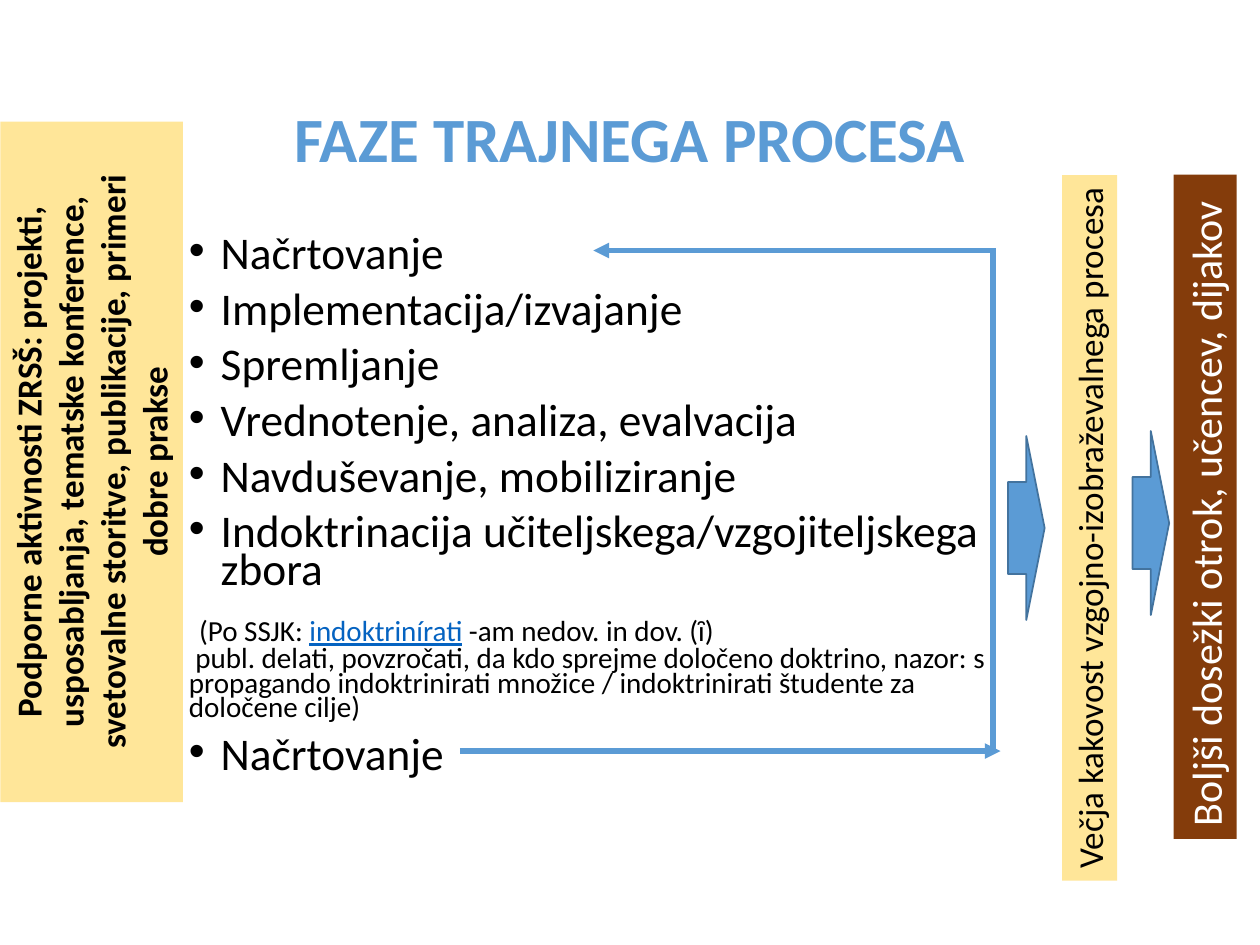
from dataclasses import dataclass

from lxml import etree
from pptx import Presentation
from pptx.dml.color import RGBColor
from pptx.enum.shapes import MSO_CONNECTOR, MSO_SHAPE
from pptx.enum.text import MSO_ANCHOR, MSO_AUTO_SIZE, PP_ALIGN
from pptx.oxml.ns import qn
from pptx.util import Cm, Pt

FONT = "Calibri"
BLACK = RGBColor(0x00, 0x00, 0x00)
WHITE = RGBColor(0xFF, 0xFF, 0xFF)
BLUE = RGBColor(0x5B, 0x9B, 0xD5)
DARK_BLUE = RGBColor(0x43, 0x73, 0x9E)
LINK_BLUE = RGBColor(0x05, 0x63, 0xC1)
SAND = RGBColor(0xFF, 0xE6, 0x99)
BROWN = RGBColor(0x84, 0x3C, 0x0B)

RECT, RIGHT_ARROW = MSO_SHAPE.RECTANGLE, MSO_SHAPE.RIGHT_ARROW
STRAIGHT = MSO_CONNECTOR.STRAIGHT
TOP, MIDDLE = MSO_ANCHOR.TOP, MSO_ANCHOR.MIDDLE
LEFT, CENTER = PP_ALIGN.LEFT, PP_ALIGN.CENTER
FIT_SHAPE = MSO_AUTO_SIZE.SHAPE_TO_FIT_TEXT

PHASE_SIZE, NOTE_SIZE = 25.9, 16.6
PHASES = [
    "Načrtovanje",
    "Implementacija/izvajanje",
    "Spremljanje",
    "Vrednotenje, analiza, evalvacija",
    "Navduševanje, mobiliziranje",
    "Indoktrinacija učiteljskega/vzgojiteljskega zbora",
]


@dataclass
class Bar:
    """Upright bar, placed as it appears after rotation, in cm."""
    text: str
    left: float
    top: float
    width: float
    height: float
    fill: RGBColor
    size: float
    color: RGBColor = BLACK
    bold: bool = False
    align: PP_ALIGN = LEFT


@dataclass
class Line:
    x1: float
    y1: float
    x2: float
    y2: float
    arrow: bool = True


BARS = [
    Bar("Večja kakovost vzgojno-izobraževalnega procesa",
        21.41, 3.53, 1.11, 14.22, SAND, 20),
    Bar("Boljši dosežki otrok, učencev, dijakov",
        23.66, 3.52, 1.27, 13.39, BROWN, 24, WHITE),
    Bar("Podporne aktivnosti ZRSŠ: projekti, usposabljanja, tematske "
        "konference, svetovalne storitve, publikacije, primeri dobre prakse",
        0.01, 2.45, 3.68, 13.72, SAND, 20, bold=True, align=CENTER),
]
LOOP = [
    Line(9.27, 15.14, 20.17, 15.14),
    Line(20.02, 15.14, 20.02, 5.0, arrow=False),
    Line(20.02, 5.05, 11.96, 5.05),
]
ARROWS = [(20.32, 8.79), (22.83, 8.69)]


def add_run(p, text: str, size: float, color: RGBColor = BLACK,
            bold: bool = False, underline: bool = False) -> None:
    r = p.add_run()
    r.text = text
    font = r.font
    font.name, font.size, font.bold = FONT, Pt(size), bold
    font.underline = underline
    font.color.rgb = color


def add_box(slide, left: float, top: float, width: float, height: float):
    tf = slide.shapes.add_textbox(
        Cm(left), Cm(top), Cm(width), Cm(height)).text_frame
    tf.word_wrap = True
    return tf


def next_paragraph(tf, first: bool = False):
    p = tf.paragraphs[0] if first else tf.add_paragraph()
    p.line_spacing = 0.7
    if not first:
        p.space_before = Pt(10)
    return p


def add_phase(tf, text: str, first: bool = False) -> None:
    p = next_paragraph(tf, first)
    pPr = p._p.get_or_add_pPr()
    indent = Cm(0.64)
    pPr.set("marL", str(indent))
    pPr.set("indent", str(-indent))
    etree.SubElement(pPr, qn("a:buFont"), typeface="Arial")
    etree.SubElement(pPr, qn("a:buChar"), char="•")
    add_run(p, text, PHASE_SIZE)


def add_definition(tf) -> None:
    p = next_paragraph(tf)
    add_run(p, " ", PHASE_SIZE)
    add_run(p, "(Po SSJK: ", NOTE_SIZE)
    add_run(p, "indoktrinírati", NOTE_SIZE, LINK_BLUE, underline=True)
    add_run(p, " -am nedov. in dov. (ȋ) ", NOTE_SIZE)
    p.add_line_break()
    add_run(p, " publ. delati, povzročati, da kdo sprejme določeno doktrino, "
               "nazor: s propagando indoktrinirati množice / indoktrinirati "
               "študente za določene cilje)", NOTE_SIZE)


def add_line(slide, line: Line) -> None:
    cxn = slide.shapes.add_connector(
        STRAIGHT, Cm(line.x1), Cm(line.y1), Cm(line.x2), Cm(line.y2))
    cxn.line.color.rgb = BLUE
    cxn.line.width = Pt(3)
    if line.arrow:
        etree.SubElement(cxn.line._get_or_add_ln(), qn("a:tailEnd"),
                         type="triangle")
    etree.SubElement(cxn._element.spPr, qn("a:effectLst"))


def add_bar(slide, bar: Bar) -> None:
    """Draw the bar lying flat about its centre, then turn it upright."""
    shift = (bar.height - bar.width) / 2
    sp = slide.shapes.add_shape(RECT, Cm(bar.left - shift), Cm(bar.top + shift),
                                Cm(bar.height), Cm(bar.width))
    sp.rotation = 270
    sp.shadow.inherit = False
    sp.fill.solid()
    sp.fill.fore_color.rgb = bar.fill
    sp.line.fill.background()
    tf = sp.text_frame
    tf.word_wrap = True
    tf.auto_size = FIT_SHAPE
    tf.vertical_anchor = TOP
    p = tf.paragraphs[0]
    p.alignment = bar.align
    add_run(p, bar.text, bar.size, bar.color, bar.bold)


def add_arrow(slide, left: float, top: float) -> None:
    sp = slide.shapes.add_shape(RIGHT_ARROW, Cm(left), Cm(top),
                                Cm(0.74), Cm(3.71))
    sp.shadow.inherit = False
    sp.fill.solid()
    sp.fill.fore_color.rgb = BLUE
    sp.line.color.rgb = DARK_BLUE
    sp.line.width = Pt(1)


def main() -> None:
    prs = Presentation()
    prs.slide_width, prs.slide_height = Cm(25.4), Cm(19.05)
    slide = prs.slides.add_slide(prs.slide_layouts[6])

    title = add_box(slide, 1.75, 1.02, 21.9, 3.68)
    title.vertical_anchor = MIDDLE
    p = title.paragraphs[0]
    p.alignment = CENTER
    p.line_spacing = 0.9
    add_run(p, "FAZE TRAJNEGA PROCESA", 36, BLUE, bold=True)

    body = add_box(slide, 3.56, 4.7, 17.3, 12.09)
    for i, phase in enumerate(PHASES):
        add_phase(body, phase, first=i == 0)
    add_definition(body)
    add_phase(body, PHASES[0])

    for line in LOOP:
        add_line(slide, line)
    for bar in BARS:
        add_bar(slide, bar)
    for left, top in ARROWS:
        add_arrow(slide, left, top)

    prs.save("out.pptx")


if __name__ == "__main__":
    main()
